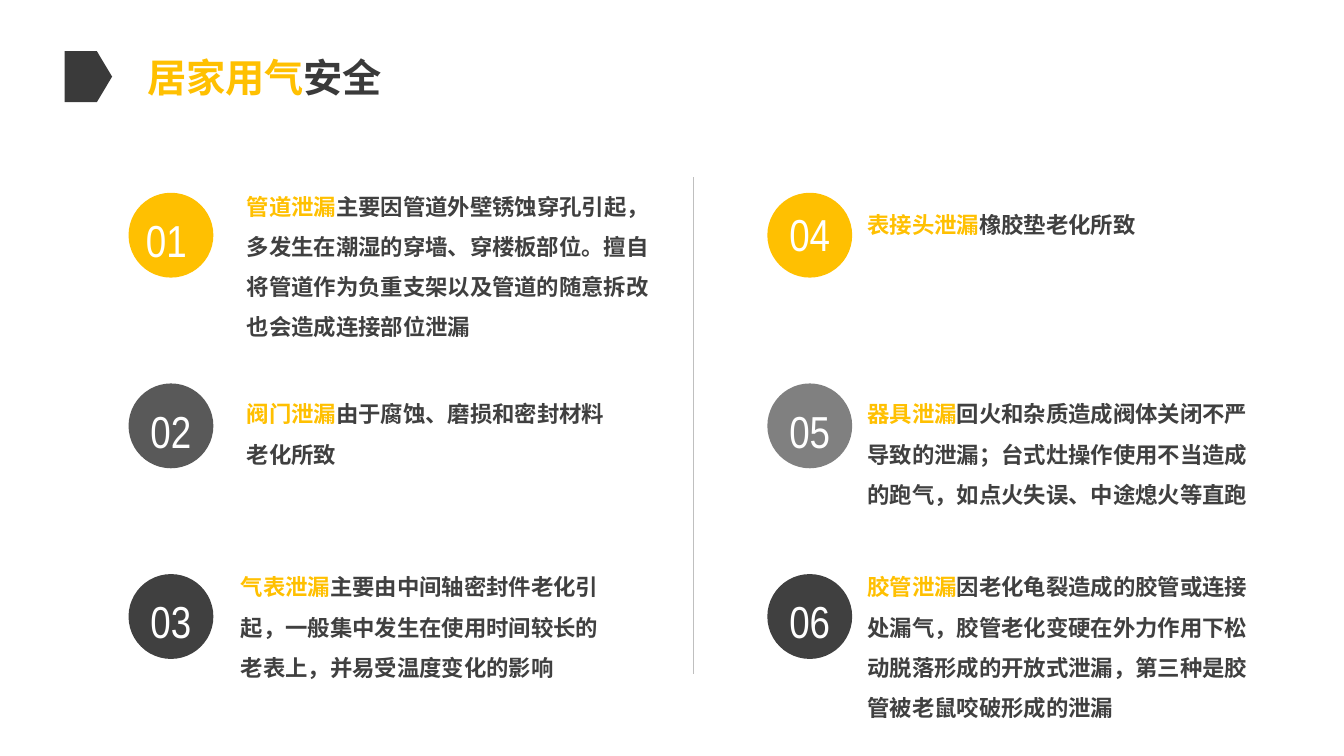
import pptx
import pptx.util
import pptx.dml.color
import pptx.enum.shapes
import pptx.enum.text
import pptx.oxml.ns
import lxml.etree

SHAPE = pptx.enum.shapes.MSO_SHAPE
ALIGN = pptx.enum.text.PP_ALIGN
ANCHOR = pptx.enum.text.MSO_ANCHOR
FIT = pptx.enum.text.MSO_AUTO_SIZE

GOLD, DARK, INK, WHITE = "FFC001", "404040", "3A3A3A", "FFFFFF"
COLS, ROWS = 160, 90
HAN, DIGIT = "Noto Sans CJK SC", "Arial Narrow"


def tint(code):
    return pptx.dml.color.RGBColor.from_string(code)


class Deck:
    """Style and current slide; all places are in grid columns and rows."""

    def __init__(self):
        self.prs = pptx.Presentation()
        self.prs.slide_width = pptx.util.Inches(13.33)
        self.prs.slide_height = pptx.util.Inches(7.5)
        self.slide = self.prs.slides.add_slide(self.prs.slide_layouts[5])

    def grid(self, left, top, width, height):
        col = self.prs.slide_width / COLS
        row = self.prs.slide_height / ROWS
        return [round(n * unit) for n, unit in
                zip((left, top, width, height), (col, row, col, row))]

    def fill(self, para, runs, size, font, bold=True):
        """Add runs given as (text, colour) pairs."""
        for text, code in runs:
            run = para.add_run()
            run.text = text
            run.font.size = pptx.util.Pt(size)
            run.font.bold = bold
            run.font.name = font
            run.font.color.rgb = tint(code)
            east = lxml.etree.SubElement(run.font._element, pptx.oxml.ns.qn("a:ea"))
            east.set("typeface", font)

    def title(self, box, runs):
        head = self.slide.shapes.title
        head.left, head.top, head.width, head.height = self.grid(*box)
        frame = head.text_frame
        frame.auto_size = FIT.NONE
        frame.vertical_anchor = ANCHOR.MIDDLE
        para = frame.paragraphs[0]
        para.alignment = ALIGN.CENTER
        self.fill(para, runs, 28, HAN)

    def shape(self, kind, box, code, home=None):
        item = (home or self.slide).shapes.add_shape(kind, *self.grid(*box))
        item.shadow.inherit = False
        item.fill.solid()
        item.fill.fore_color.rgb = tint(code)
        item.line.fill.background()
        return item

    def line(self, x, top, end, code):
        x1, y1, x2, y2 = self.grid(x, top, x, end)
        rule = self.slide.shapes.add_connector(
            pptx.enum.shapes.MSO_CONNECTOR.STRAIGHT, x1, y1, x2, y2)
        rule.line.color.rgb = tint(code)
        rule.line.width = pptx.util.Pt(0.5)
        lxml.etree.SubElement(rule._element.spPr, pptx.oxml.ns.qn("a:effectLst"))

    def text(self, box, runs):
        frame = self.slide.shapes.add_textbox(*self.grid(*box)).text_frame
        frame.word_wrap = True
        para = frame.paragraphs[0]
        para.line_spacing = 1.5
        self.fill(para, runs, 16, HAN)

    def badge(self, left, top, label, code, dx, dy):
        """Numbered disc; dx and dy shift the number off the centre."""
        side, wide, tall = 10.1, 8, 7.7
        group = self.slide.shapes.add_group_shape()
        self.shape(SHAPE.OVAL, (left, top, side, side), code, group)
        spot = (left + (side - wide) / 2 + dx, top + (side - tall) / 2 + dy, wide, tall)
        frame = group.shapes.add_textbox(*self.grid(*spot)).text_frame
        frame.word_wrap = False
        frame.auto_size = FIT.SHAPE_TO_FIT_TEXT
        para = frame.paragraphs[0]
        para.alignment = ALIGN.CENTER
        self.fill(para, [(label, WHITE)], 32, DIGIT, False)


# disc colour, number shift, text box, lead words, rest
LEAKS = [
    (GOLD, (-0.55, 0.6), (28.2, 20.76, 51.6, 21.1), "管道泄漏",
     "主要因管道外壁锈蚀穿孔引起，多发生在潮湿的穿墙、穿楼板部位。"
     "擅自将管道作为负重支架以及管道的随意拆改也会造成连接部位泄漏"),
    ("595959", (0, 0.6), (28.2, 45.5, 45.4, 13.4), "阀门泄漏",
     "由于腐蚀、磨损和密封材料老化所致"),
    (DARK, (0, 0.6), (27.5, 66.1, 45.4, 15.4), "气表泄漏",
     "主要由中间轴密封件老化引起，一般集中发生在使用时间较长的老表上，并易受温度变化的影响"),
    (GOLD, (0, -0.1), (102.1, 23, 46, 11.2), "表接头泄漏", "橡胶垫老化所致"),
    ("808080", (0, 0.6), (102.1, 45.5, 50, 17.6), "器具泄漏",
     "回火和杂质造成阀体关闭不严导致的泄漏；"
     "台式灶操作使用不当造成的跑气，如点火失误、中途熄火等直跑"),
    (DARK, (0, 0.6), (102.1, 66.1, 50, 21.6), "胶管泄漏",
     "因老化龟裂造成的胶管或连接处漏气，胶管老化变硬在外力作用下松动脱落形成的开放式泄漏，"
     "第三种是胶管被老鼠咬破形成的泄漏"),
]


def main():
    deck = Deck()
    deck.line(82.55, 21.1, 80.3, "BFBFBF")
    for i, (code, shift, box, lead, rest) in enumerate(LEAKS):
        side, step = divmod(i, 3)
        deck.text(box, [(lead, GOLD), (rest, DARK)])
        deck.badge(15.3 + 76.05 * side, 22.95 + 22.7 * step, f"{i + 1:02}", code, *shift)
    mark = deck.shape(SHAPE.PENTAGON, (7.7, 6.1, 5.65, 6.05), INK)
    mark.adjustments[0] = 0.32
    deck.title((7.7, 5.8, 47.6, 6.8), [("居家用气", GOLD), ("安全", INK)])
    deck.prs.save("out.pptx")


if __name__ == "__main__":
    main()
